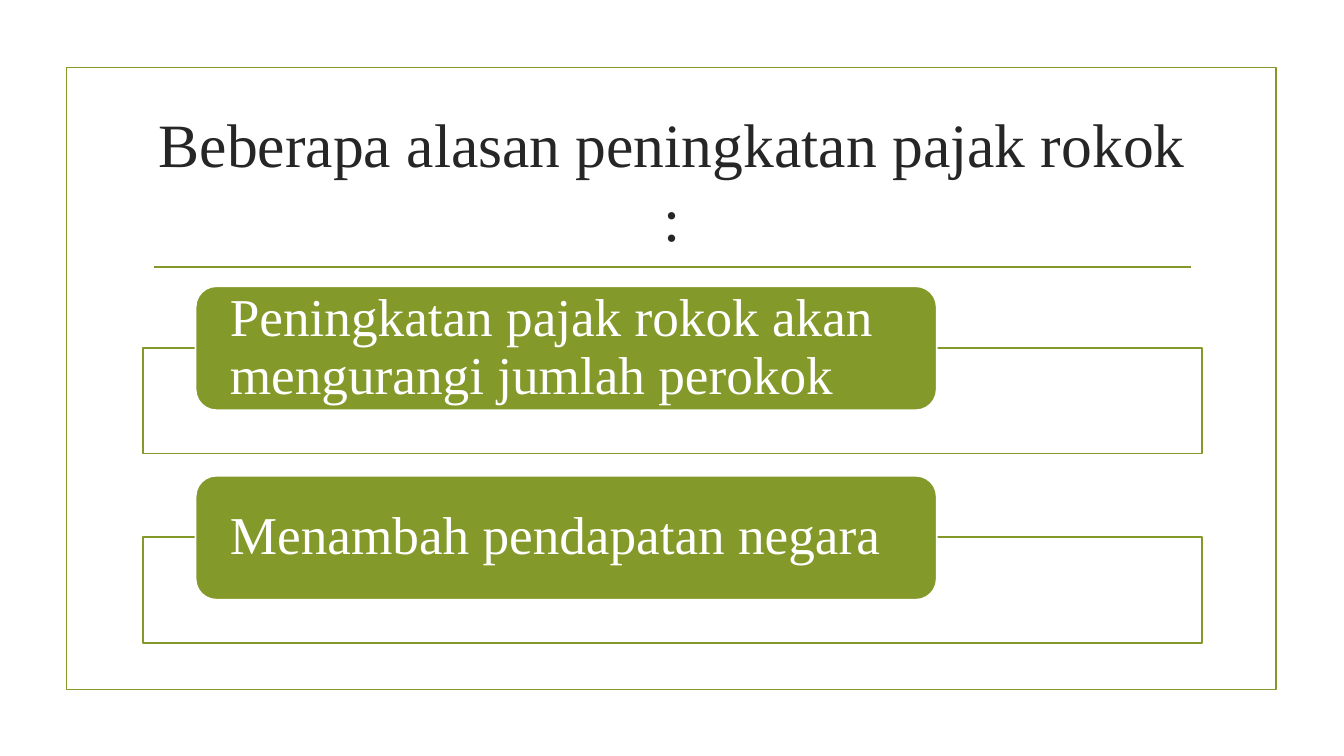
from lxml.etree import SubElement
from pptx import Presentation
from pptx.dml.color import RGBColor
from pptx.enum.shapes import MSO_CONNECTOR, MSO_SHAPE
from pptx.enum.text import MSO_ANCHOR, PP_ALIGN
from pptx.oxml.ns import qn
from pptx.util import Inches, Pt

OLIVE = RGBColor(0x83, 0x99, 0x2A)
WHITE = RGBColor(0xFF, 0xFF, 0xFF)
CHARCOAL = RGBColor(0x26, 0x26, 0x26)
FONT = "Times New Roman"
LINE_WIDTH = Pt(1.25)
REASONS = [
    "Peningkatan pajak rokok akan mengurangi jumlah perokok",
    "Menambah pendapatan negara",
]


def add_box(slide, kind, left, top, width, height, fill, line):
    shape = slide.shapes.add_shape(
        kind, Inches(left), Inches(top), Inches(width), Inches(height)
    )
    shape.shadow.inherit = False
    if fill is None:
        shape.fill.background()
    else:
        shape.fill.solid()
        shape.fill.fore_color.rgb = fill
    shape.line.color.rgb = line
    shape.line.width = LINE_WIDTH
    return shape


def write_text(shape, text, size, color, alignment, side, edge, spacing):
    frame = shape.text_frame
    frame_format = {
        "word_wrap": True,
        "vertical_anchor": MSO_ANCHOR.MIDDLE,
        "margin_left": Inches(side),
        "margin_right": Inches(side),
        "margin_top": Inches(edge),
        "margin_bottom": Inches(edge),
    }
    for name, value in frame_format.items():
        setattr(frame, name, value)
    paragraph = frame.paragraphs[0]
    paragraph.alignment = alignment
    paragraph.line_spacing = spacing
    run = paragraph.add_run()
    run.text = text
    for name, value in {"name": FONT, "size": Pt(size)}.items():
        setattr(run.font, name, value)
    run.font.color.rgb = color


def add_frame(slide, left, top, width, height):
    add_box(slide, MSO_SHAPE.RECTANGLE, left, top, width, height, None, OLIVE)


def add_title(slide, left, top, width, height):
    title = slide.shapes.add_textbox(
        Inches(left), Inches(top), Inches(width), Inches(height)
    )
    write_text(title, "Beberapa alasan peningkatan pajak rokok :",
               44, CHARCOAL, PP_ALIGN.CENTER, 0.1, 0.05, 1.0)
    rule_top = Inches(top + height + 0.15)
    rule = slide.shapes.add_connector(
        MSO_CONNECTOR.STRAIGHT,
        Inches(left + 0.11), rule_top, Inches(left + width - 0.11), rule_top,
    )
    rule.line.color.rgb = OLIVE
    rule.line.width = LINE_WIDTH
    SubElement(rule._element.spPr, qn("a:effectLst"))


def add_reason(slide, text, left, top, width):
    add_box(slide, MSO_SHAPE.RECTANGLE,
            left, top + 0.61, width, 1.05, WHITE, OLIVE)
    label = add_box(slide, MSO_SHAPE.ROUNDED_RECTANGLE,
                    left + 0.52, top, width * 0.7, 1.23, OLIVE, WHITE)
    write_text(label, text, 38, WHITE, PP_ALIGN.LEFT, 0.28, 0, 0.9)


def add_reasons(slide, left, top, width, pitch):
    for index, text in enumerate(REASONS):
        add_reason(slide, text, left, top + index * pitch, width)


def main():
    presentation = Presentation()
    presentation.slide_width = Inches(13.33)
    presentation.slide_height = Inches(7.5)
    slide = presentation.slides.add_slide(presentation.slide_layouts[6])
    add_frame(slide, 0.66, 0.67, 12, 6.17)
    add_title(slide, 1.42, 1.07, 10.5, 1.43)
    add_reasons(slide, 1.42, 2.84, 10.5, 1.88)
    presentation.save("out.pptx")


if __name__ == "__main__":
    main()
